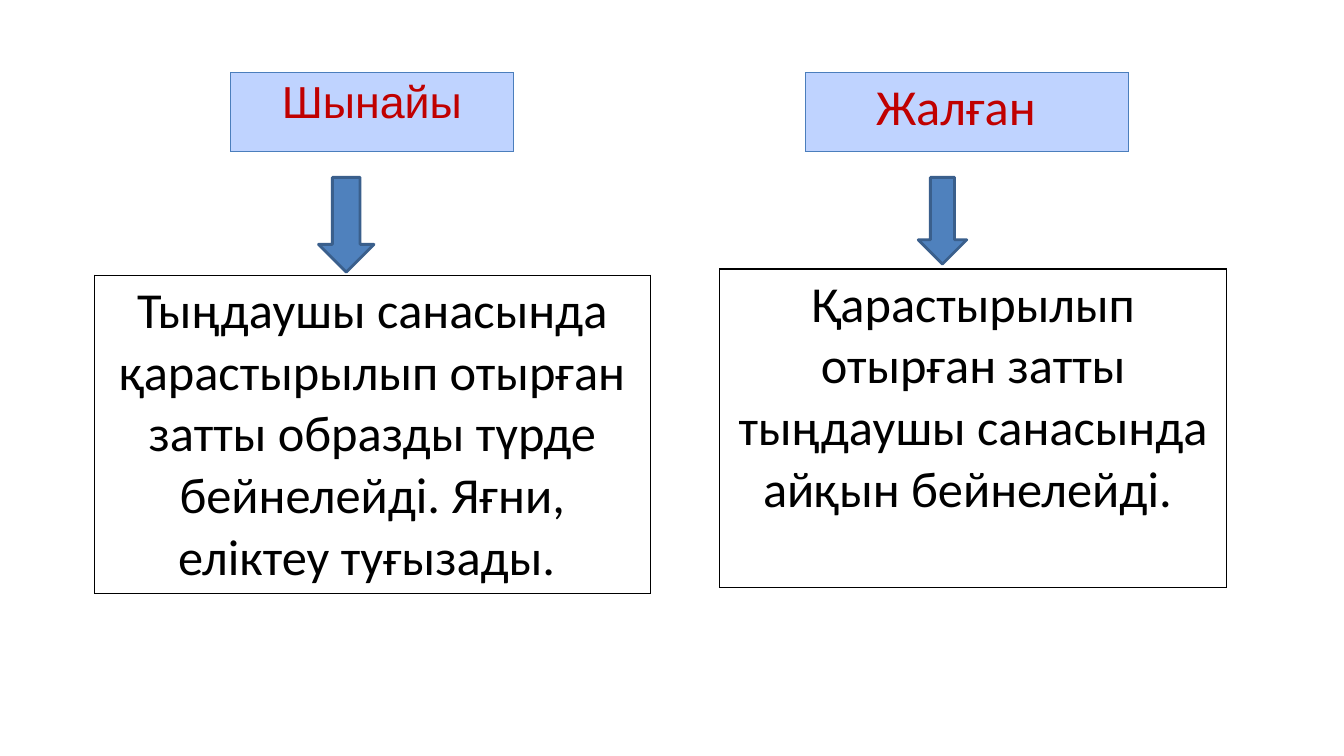
from dataclasses import dataclass

import lxml.etree
import pptx
import pptx.dml.color
import pptx.enum.shapes
import pptx.enum.text
import pptx.oxml.ns
import pptx.slide
import pptx.table
import pptx.util

Pt = pptx.util.Pt
Align = pptx.enum.text.PP_ALIGN


@dataclass(frozen=True)
class Theme:
    heading_fill: str = "BFD3FF"
    heading_border: str = "4B7EBC"
    heading_text: str = "C00000"
    body_border: str = "000000"
    body_text: str = "000000"
    arrow_fill: str = "4F81BD"
    arrow_line: str = "3A5F8C"
    heading_border_width: float = 0.75
    body_border_width: float = 1
    arrow_line_width: float = 2
    small_size: float = 32
    large_size: float = 36
    heading_font: str = "Arial"
    body_font: str = "Calibri"


THEME = Theme()


@dataclass(frozen=True)
class Area:
    left: float
    top: float
    width: float
    height: float

    def lengths(self) -> tuple[pptx.util.Length, ...]:
        return Pt(self.left), Pt(self.top), Pt(self.width), Pt(self.height)


@dataclass(frozen=True)
class Box:
    area: Area
    text: str
    font: str = THEME.body_font
    size: float = THEME.large_size
    color: str = THEME.body_text
    border: str = THEME.body_border
    border_width: float = THEME.body_border_width
    fill: str | None = None
    align: Align = Align.CENTER
    left_margin: float = 7.2


@dataclass(frozen=True)
class Branch:
    """One kind of perception: heading, arrow and explanation."""
    heading: Box
    arrow: Area
    body: Box


def heading_box(area: Area, text: str, font: str, size: float,
                align: Align = Align.CENTER, left_margin: float = 7.2) -> Box:
    return Box(area, text, font, size, THEME.heading_text, THEME.heading_border,
               THEME.heading_border_width, THEME.heading_fill, align, left_margin)


BRANCHES = (
    Branch(
        heading_box(Area(164.9, 51.8, 201.6, 56.2), "Шынайы",
                    THEME.heading_font, THEME.small_size),
        Area(227.5, 126.7, 39.6, 67.7),
        Box(Area(67.7, 196.6, 396.7, 227.5),
            "Тыңдаушы санасында қарастырылып отырған затты образды түрде "
            "бейнелейді. Яғни, еліктеу туғызады. "),
    ),
    Branch(
        heading_box(Area(575.3, 51.8, 230.4, 56.2), "Жалған",
                    THEME.body_font, THEME.large_size, Align.LEFT, 50.5),
        Area(655.9, 126.7, 34.6, 61.9),
        Box(Area(514.1, 192.2, 362.2, 227.5),
            "Қарастырылып отырған затты тыңдаушы санасында айқын бейнелейді. "),
    ),
)


def rgb(color: str) -> pptx.dml.color.RGBColor:
    return pptx.dml.color.RGBColor.from_string(color)


def add_borders(cell: pptx.table._Cell, color: str, width: float) -> None:
    """Outline all four sides; must precede the fill in the cell properties."""
    properties = cell._tc.get_or_add_tcPr()
    qn = pptx.oxml.ns.qn
    for side in ("a:lnL", "a:lnR", "a:lnT", "a:lnB"):
        line = lxml.etree.SubElement(properties, qn(side), w=str(Pt(width)))
        solid = lxml.etree.SubElement(line, qn("a:solidFill"))
        lxml.etree.SubElement(solid, qn("a:srgbClr"), val=color)


def add_box(page: pptx.slide.Slide, box: Box) -> None:
    table = page.shapes.add_table(1, 1, *box.area.lengths()).table
    table.first_row = False
    table.horz_banding = False
    cell = table.cell(0, 0)
    cell.margin_left = Pt(box.left_margin)
    add_borders(cell, box.border, box.border_width)
    if box.fill:
        cell.fill.solid()
        cell.fill.fore_color.rgb = rgb(box.fill)
    else:
        cell.fill.background()
    para = cell.text_frame.paragraphs[0]
    para.alignment = box.align
    span = para.add_run()
    span.text = box.text
    span.font.name = box.font
    span.font.size = Pt(box.size)
    span.font.color.rgb = rgb(box.color)


def add_arrow(page: pptx.slide.Slide, area: Area) -> None:
    arrow = page.shapes.add_shape(
        pptx.enum.shapes.MSO_SHAPE.DOWN_ARROW, *area.lengths())
    arrow.shadow.inherit = False
    arrow.fill.solid()
    arrow.fill.fore_color.rgb = rgb(THEME.arrow_fill)
    arrow.line.color.rgb = rgb(THEME.arrow_line)
    arrow.line.width = Pt(THEME.arrow_line_width)


def main() -> None:
    deck = pptx.Presentation()
    deck.slide_width, deck.slide_height = Pt(960), Pt(540)
    page = deck.slides.add_slide(deck.slide_layouts[6])
    for branch in BRANCHES:
        add_box(page, branch.heading)
        add_arrow(page, branch.arrow)
        add_box(page, branch.body)
    deck.save("out.pptx")


if __name__ == "__main__":
    main()
